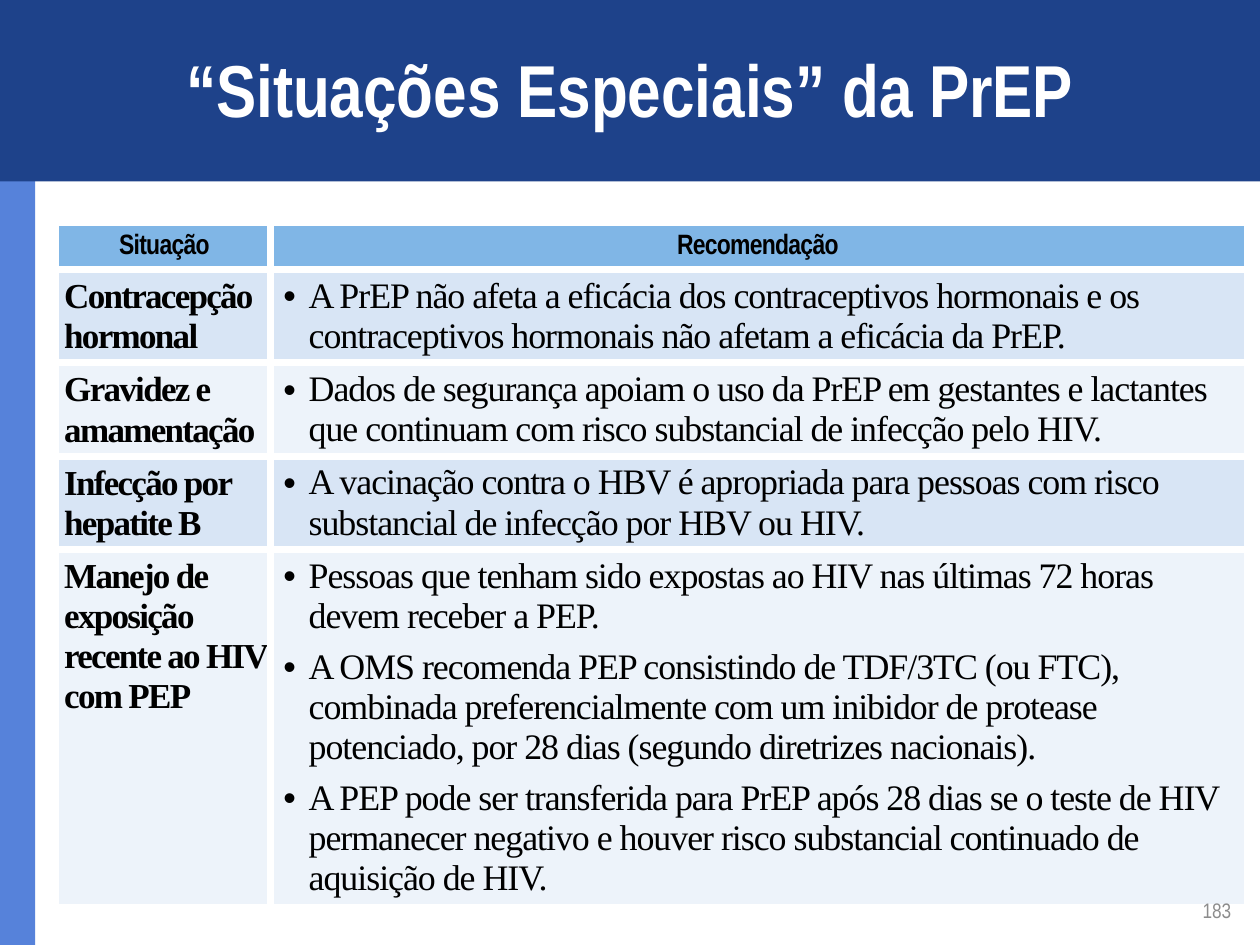
import dataclasses

import lxml.etree
import pptx
import pptx.dml.color
import pptx.enum.shapes
import pptx.enum.text
import pptx.oxml.ns
import pptx.util

Inches = pptx.util.Inches
Pt = pptx.util.Pt
ALIGN = pptx.enum.text.PP_ALIGN
MIDDLE = pptx.enum.text.MSO_ANCHOR.MIDDLE


@dataclasses.dataclass(frozen=True)
class Theme:
    head_font: str = "Arial Narrow"
    body_font: str = "Times New Roman"
    navy: str = "1E428A"
    blue: str = "5682DA"
    sky: str = "80B6E6"
    bands: tuple = ("D8E5F5", "EDF3FA")
    white: str = "FFFFFF"
    black: str = "000000"
    gray: str = "8C8C8C"
    title_size: float = 42
    head_size: float = 16
    label_size: float = 20
    body_size: float = 20.5
    page_size: float = 12
    leading: float = 23
    thin: float = 1
    thick: float = 4.5


ROWS = [
    ("Contracepção hormonal",
     ["A PrEP não afeta a eficácia dos contraceptivos hormonais e os "
      "contraceptivos hormonais não afetam a eficácia da PrEP."]),
    ("Gravidez e amamentação",
     ["Dados de segurança apoiam o uso da PrEP em gestantes e lactantes "
      "que continuam com risco substancial de infecção pelo HIV."]),
    ("Infecção por hepatite B",
     ["A vacinação contra o HBV é apropriada para pessoas com risco "
      "substancial de infecção por HBV ou HIV."]),
    ("Manejo de exposição recente ao HIV com PEP",
     ["Pessoas que tenham sido expostas ao HIV nas últimas 72 horas "
      "devem receber a PEP.",
      "A OMS recomenda PEP consistindo de TDF/3TC (ou FTC), combinada "
      "preferencialmente com um inibidor de protease potenciado, por 28 dias "
      "(segundo diretrizes nacionais).",
      "A PEP pode ser transferida para PrEP após 28 dias se o teste de HIV "
      "permanecer negativo e houver risco substancial continuado de "
      "aquisição de HIV."]),
]


def paint(fill, color):
    fill.solid()
    fill.fore_color.rgb = pptx.dml.color.RGBColor.from_string(color)


def add_node(parent, tag, **attrs):
    node = lxml.etree.SubElement(parent, pptx.oxml.ns.qn(tag))
    for key, value in attrs.items():
        node.set(key, str(value))
    return node


def write(frame, lines, font, size, color, bold=False, align=ALIGN.LEFT,
          track=0, leading=None, bullet=False, gap=0):
    """Fill a text frame, one paragraph a line; track, leading and gap are points."""
    frame.word_wrap = True
    for index, line in enumerate(lines):
        para = frame.add_paragraph() if index else frame.paragraphs[0]
        para.alignment = align
        if bullet:
            props = para._p.get_or_add_pPr()
            props.set("marL", str(Inches(0.2)))
            props.set("indent", str(-Inches(0.2)))
            add_node(props, "a:buFont", typeface="Arial")
            add_node(props, "a:buChar", char="•")
        if leading:
            para.line_spacing = Pt(leading)
        if index and gap:
            para.space_before = Pt(gap)
        run = para.add_run()
        run.text = line
        run.font.name = font
        run.font.size = Pt(size)
        run.font.bold = bold
        paint(run.font.fill, color)
        if track:
            run._r.get_or_add_rPr().set("spc", str(round(track * 100)))


def set_edges(cell, color, widths):
    """Draw cell borders; widths holds the points for sides L, R, T and B."""
    props = cell._tc.get_or_add_tcPr()
    for side, width in widths.items():
        line = add_node(props, "a:ln" + side, w=Pt(width))
        add_node(add_node(line, "a:solidFill"), "a:srgbClr", val=color)


class Maker:
    """Holds the theme and the slide being drawn."""

    def __init__(self, slide, theme):
        self.slide = slide
        self.theme = theme

    def block(self, left, top, width, height, color):
        shape = self.slide.shapes.add_shape(
            pptx.enum.shapes.MSO_SHAPE.RECTANGLE,
            Inches(left), Inches(top), Inches(width), Inches(height))
        shape.shadow.inherit = False
        paint(shape.fill, color)
        shape.line.fill.background()

    def title(self, text):
        theme, title = self.theme, self.slide.shapes.title
        title.left, title.top = Inches(0.5), Inches(0.23)
        title.width, title.height = Inches(9), Inches(0.94)
        title.text_frame.vertical_anchor = MIDDLE
        write(title.text_frame, [text], theme.head_font, theme.title_size,
              theme.white, bold=True, align=ALIGN.CENTER)
        title.element.getparent().append(title.element)

    def page(self, text):
        theme = self.theme
        box = self.slide.shapes.add_textbox(
            Inches(7.54), Inches(7.02), Inches(2.33), Inches(0.4))
        box.text_frame.vertical_anchor = MIDDLE
        write(box.text_frame, [text], theme.head_font, theme.page_size,
              theme.gray, align=ALIGN.RIGHT)

    def cell(self, grid, row, col, color):
        """Colour a cell, with thin outer and thick inner borders."""
        theme, cell = self.theme, grid.cell(row, col)
        last_row, last_col = len(grid.rows) - 1, len(grid.columns) - 1
        outer = {"L": col == 0, "R": col == last_col,
                 "T": row == 0, "B": row == last_row}
        set_edges(cell, theme.white,
                  {side: theme.thin if edge else theme.thick
                   for side, edge in outer.items()})
        paint(cell.fill, color)
        return cell

    def table(self, heads, rows, widths, heights):
        theme = self.theme
        grid = self.slide.shapes.add_table(
            len(heights), len(widths), Inches(0.46), Inches(1.79),
            Inches(sum(widths)), Inches(sum(heights))).table
        for col, width in zip(grid.columns, widths):
            col.width = Inches(width)
        for row, height in zip(grid.rows, heights):
            row.height = Inches(height)
        for col, head in enumerate(heads):
            cell = self.cell(grid, 0, col, theme.sky)
            cell.vertical_anchor = MIDDLE
            write(cell.text_frame, [head], theme.head_font, theme.head_size,
                  theme.black, bold=True, align=ALIGN.CENTER, track=-0.4)
        for row, (label, points) in enumerate(rows, 1):
            color = theme.bands[(row - 1) % 2]
            cell = self.cell(grid, row, 0, color)
            cell.margin_left, cell.margin_right = Inches(0.05), Inches(0.01)
            write(cell.text_frame, [label], theme.body_font, theme.label_size,
                  theme.black, bold=True, track=-1, leading=theme.leading)
            cell = self.cell(grid, row, 1, color)
            write(cell.text_frame, points, theme.body_font, theme.body_size,
                  theme.black, track=-0.6, leading=theme.leading,
                  bullet=True, gap=6)


def main():
    deck = pptx.Presentation()
    deck.slide_width, deck.slide_height = Inches(10), Inches(7.5)
    theme = Theme()
    maker = Maker(deck.slides.add_slide(deck.slide_layouts[5]), theme)
    maker.block(0, 1.31, 0.28, 6.19, theme.blue)
    maker.block(0, 0, 10, 1.44, theme.navy)
    maker.title("“Situações Especiais” da PrEP")
    maker.table(["Situação", "Recomendação"], ROWS,
                [1.69, 7.73], [0.35] + [0.74] * 3 + [2.81])
    maker.page("183")
    deck.save("out.pptx")


if __name__ == "__main__":
    main()
